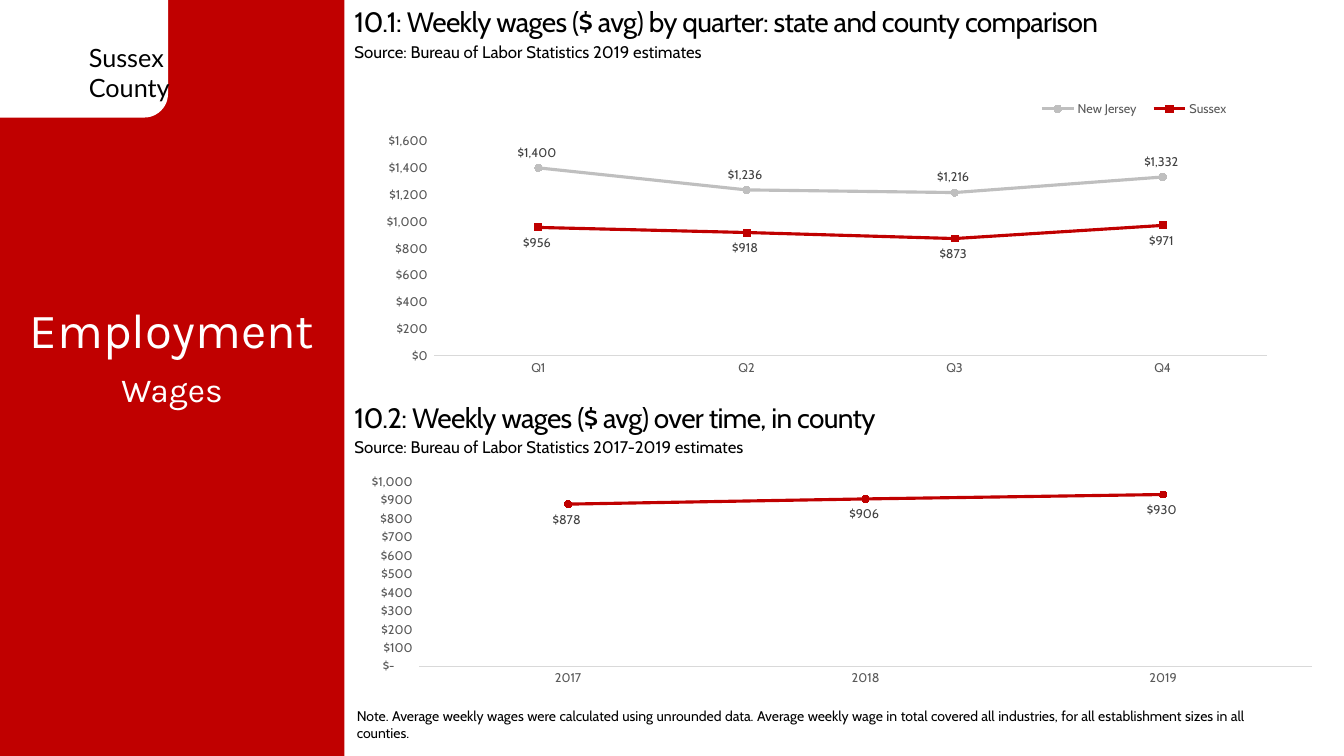
"""Build the Sussex County weekly wages slide."""
from dataclasses import dataclass

from lxml import etree
from pptx import Presentation
from pptx.chart.chart import Chart
from pptx.chart.data import CategoryChartData
from pptx.dml.color import RGBColor
from pptx.enum.chart import (XL_CHART_TYPE, XL_LABEL_POSITION, XL_LEGEND_POSITION,
                             XL_MARKER_STYLE, XL_TICK_MARK)
from pptx.enum.shapes import MSO_SHAPE
from pptx.enum.text import MSO_ANCHOR, MSO_AUTO_SIZE, PP_ALIGN
from pptx.oxml.ns import qn
from pptx.slide import Slide
from pptx.text.text import Font
from pptx.util import Emu, Inches, Pt

LINE_MARKERS = XL_CHART_TYPE.LINE_MARKERS
ABOVE, BELOW = XL_LABEL_POSITION.ABOVE, XL_LABEL_POSITION.BELOW
CIRCLE, SQUARE = XL_MARKER_STYLE.CIRCLE, XL_MARKER_STYLE.SQUARE
NO_TICK = XL_TICK_MARK.NONE
LEGEND_BOTTOM = XL_LEGEND_POSITION.BOTTOM
RECTANGLE, ROUNDED = MSO_SHAPE.RECTANGLE, MSO_SHAPE.ROUNDED_RECTANGLE
LEFT, CENTER, JUSTIFY = PP_ALIGN.LEFT, PP_ALIGN.CENTER, PP_ALIGN.JUSTIFY
TOP, MIDDLE = MSO_ANCHOR.TOP, MSO_ANCHOR.MIDDLE
GROW, FIXED = MSO_AUTO_SIZE.SHAPE_TO_FIT_TEXT, MSO_AUTO_SIZE.NONE

COLORS = {"red": "C00000", "white": "FFFFFF", "black": "000000", "silver": "BFBFBF",
          "axis": "D9D9D9", "axis_text": "595959", "label": "404040"}
WIDTH, HEIGHT = Inches(13.33), Inches(7.5)
COLUMNS, ROWS = 160, 90
PANEL = 41
DOLLARS = '"$"#,##0_);[Red]\\("$"#,##0\\)'
ACCOUNTING = '_("$"* #,##0_);_("$"* \\(#,##0\\);_("$"* "-"??_);_(@_)'


@dataclass(frozen=True)
class Area:
    column: float
    row: float
    columns: float
    rows: float

    def lengths(self) -> tuple[Emu, Emu, Emu, Emu]:
        """Return left, top, width and height."""
        across, down = WIDTH / COLUMNS, HEIGHT / ROWS
        return (Emu(round(self.column * across)), Emu(round(self.row * down)),
                Emu(round(self.columns * across)), Emu(round(self.rows * down)))


@dataclass(frozen=True)
class Block:
    kind: int
    area: Area
    color: str


@dataclass(frozen=True)
class Label:
    lines: tuple[str, ...]
    area: Area
    size: float
    family: str = "Cabin"
    color: str = "black"
    align: int = LEFT
    anchor: int = TOP
    fit: int = GROW
    tracking: int = 0
    is_title: bool = False


@dataclass(frozen=True)
class Line:
    name: str
    values: tuple[int, ...]
    color: str
    marker: int
    position: int


@dataclass(frozen=True)
class WageChart:
    area: Area
    categories: tuple[str, ...]
    lines: tuple[Line, ...]
    plot: tuple[float, float, float, float]
    top: int
    step: int
    axis_format: str
    legend: tuple[float, float, float, float] | None = None


BLOCKS = (Block(RECTANGLE, Area(0, 0, PANEL, ROWS), "red"),
          Block(ROUNDED, Area(-4, -3, 24, 17), "white"))


def heading(text: str, row: float) -> Label:
    """Describe a chart heading."""
    return Label((text,), Area(PANEL, row, 118.4, 5.28), 20, tracking=-50)


def source(text: str, row: float) -> Label:
    """Describe a source line."""
    return Label((text,), Area(PANEL, row, 110.3, 3.6), 12)


LABELS = (
    Label(("Sussex", "County"), Area(9.4, 4.4, 12, 8.5), 18, "Lato"),
    Label(("Employment",), Area(0, 35, PANEL, 8.3), 35, "Karla", "white", CENTER,
          is_title=True),
    Label(("Wages",), Area(0, 43.3, PANEL, 6), 24, "Karla", "white", CENTER),
    heading("10.1: Weekly wages ($ avg) by quarter: state and county comparison", 0),
    source("Source: Bureau of Labor Statistics 2019 estimates", 4.35),
    heading("10.2: Weekly wages ($ avg) over time, in county", 47.1),
    source("Source: Bureau of Labor Statistics 2017-2019 estimates", 51.45),
    Label(("Note. Average weekly wages were calculated using unrounded data. Average weekly "
           "wage in total covered all industries, for all establishment sizes in all counties.",),
          Area(41.3, 83.2, 108, 6), 10, align=JUSTIFY, anchor=MIDDLE, fit=FIXED),
)
CHARTS = (
    WageChart(Area(43, 11.2, 108.9, 35), ("Q1", "Q2", "Q3", "Q4"),
              (Line("New Jersey", (1400, 1236, 1216, 1332), "silver", CIRCLE, ABOVE),
               Line("Sussex", (956, 918, 873, 971), "red", SQUARE, BELOW)),
              (0.08, 0.16, 0.91, 0.73), 1600, 200, DOLLARS, (0.73, 0.01, 0.23, 0.08)),
    WageChart(Area(43, 56.4, 115.5, 27.6), ("2017", "2018", "2019"),
              (Line("Series 1", (878, 906, 930), "red", CIRCLE, BELOW),),
              (0.06, 0.03, 0.92, 0.8), 1000, 100, ACCOUNTING),
)


def rgb(name: str) -> RGBColor:
    """Look up a colour."""
    return RGBColor.from_string(COLORS[name])


def style_font(font: Font, family: str, size: float, color: str) -> None:
    """Set family, size and colour."""
    font.name, font.size = family, Pt(size)
    font.color.rgb = rgb(color)


def draw_block(page: Slide, block: Block) -> None:
    """Draw a plain filled shape."""
    shape = page.shapes.add_shape(block.kind, *block.area.lengths())
    shape.shadow.inherit = False
    shape.fill.solid()
    shape.fill.fore_color.rgb = rgb(block.color)
    shape.line.fill.background()


def draw_label(page: Slide, label: Label) -> None:
    """Write a text box or the slide title."""
    if label.is_title:
        box = page.shapes.title
        box.element.getparent().append(box.element)
        box.left, box.top, box.width, box.height = label.area.lengths()
    else:
        box = page.shapes.add_textbox(*label.area.lengths())
    frame = box.text_frame
    frame.word_wrap, frame.auto_size = True, label.fit
    frame.vertical_anchor = label.anchor
    for index, line in enumerate(label.lines):
        para = frame.add_paragraph() if index else frame.paragraphs[0]
        para.alignment = label.align
        span = para.add_run()
        span.text = line
        style_font(span.font, label.family, label.size, label.color)
        if label.tracking:
            span.font._element.set("spc", str(label.tracking))


def set_layout(chart: Chart, part: str, index: int, shares: tuple[float, ...]) -> None:
    """Place a chart part by shares of the chart area."""
    parent = chart.element.find(f".//{qn(part)}")
    for old in parent.findall(qn("c:layout")):
        parent.remove(old)
    layout = etree.Element(qn("c:layout"))
    parent.insert(index, layout)
    manual = etree.SubElement(layout, qn("c:manualLayout"))
    settings = [("xMode", "edge"), ("yMode", "edge"), *zip("xywh", shares)]
    if part == "c:plotArea":
        settings.insert(0, ("layoutTarget", "inner"))
    for tag, value in settings:
        etree.SubElement(manual, qn(f"c:{tag}")).set("val", str(value))


def draw_chart(page: Slide, wages: WageChart) -> None:
    """Draw a line chart of weekly wages."""
    data = CategoryChartData(number_format=DOLLARS)
    data.categories = wages.categories
    for line in wages.lines:
        data.add_series(line.name, line.values)
    chart = page.shapes.add_chart(LINE_MARKERS, *wages.area.lengths(), data).chart
    style_font(chart.font, "Calibri", 10, "black")
    chart.has_title = False
    chart.has_legend = wages.legend is not None
    if wages.legend:
        chart.legend.position = LEGEND_BOTTOM
        chart.legend.include_in_layout = False
        style_font(chart.legend.font, "Cabin", 9, "axis_text")
        set_layout(chart, "c:legend", 1, wages.legend)
    set_layout(chart, "c:plotArea", 0, wages.plot)
    for axis in (chart.category_axis, chart.value_axis):
        axis.major_tick_mark = axis.minor_tick_mark = NO_TICK
        axis.has_major_gridlines = False
        style_font(axis.tick_labels.font, "Cabin", 9, "axis_text")
    chart.category_axis.format.line.color.rgb = rgb("axis")
    chart.category_axis.format.line.width = Pt(0.75)
    scale = chart.value_axis
    scale.format.line.fill.background()
    scale.minimum_scale, scale.maximum_scale, scale.major_unit = 0, wages.top, wages.step
    scale.tick_labels.number_format = wages.axis_format
    scale.tick_labels.number_format_is_linked = False
    chart.plots[0].vary_by_categories = False
    for line, series in zip(wages.lines, chart.plots[0].series):
        series.smooth = False
        series.format.line.color.rgb = rgb(line.color)
        series.format.line.width = Pt(2.25)
        series.marker.style, series.marker.size = line.marker, 5
        series.marker.format.fill.solid()
        series.marker.format.fill.fore_color.rgb = rgb(line.color)
        series.marker.format.line.color.rgb = rgb(line.color)
        labels = series.data_labels
        labels.show_value, labels.position = True, line.position
        labels.number_format, labels.number_format_is_linked = DOLLARS, False
        style_font(labels.font, "Cabin", 9, "label")


def main() -> None:
    """Build and save the deck."""
    deck = Presentation()
    deck.slide_width, deck.slide_height = WIDTH, HEIGHT
    page = deck.slides.add_slide(deck.slide_layouts.get_by_name("Title Only"))
    for block in BLOCKS:
        draw_block(page, block)
    for label in LABELS:
        draw_label(page, label)
    for wages in CHARTS:
        draw_chart(page, wages)
    deck.save("out.pptx")


if __name__ == "__main__":
    main()
